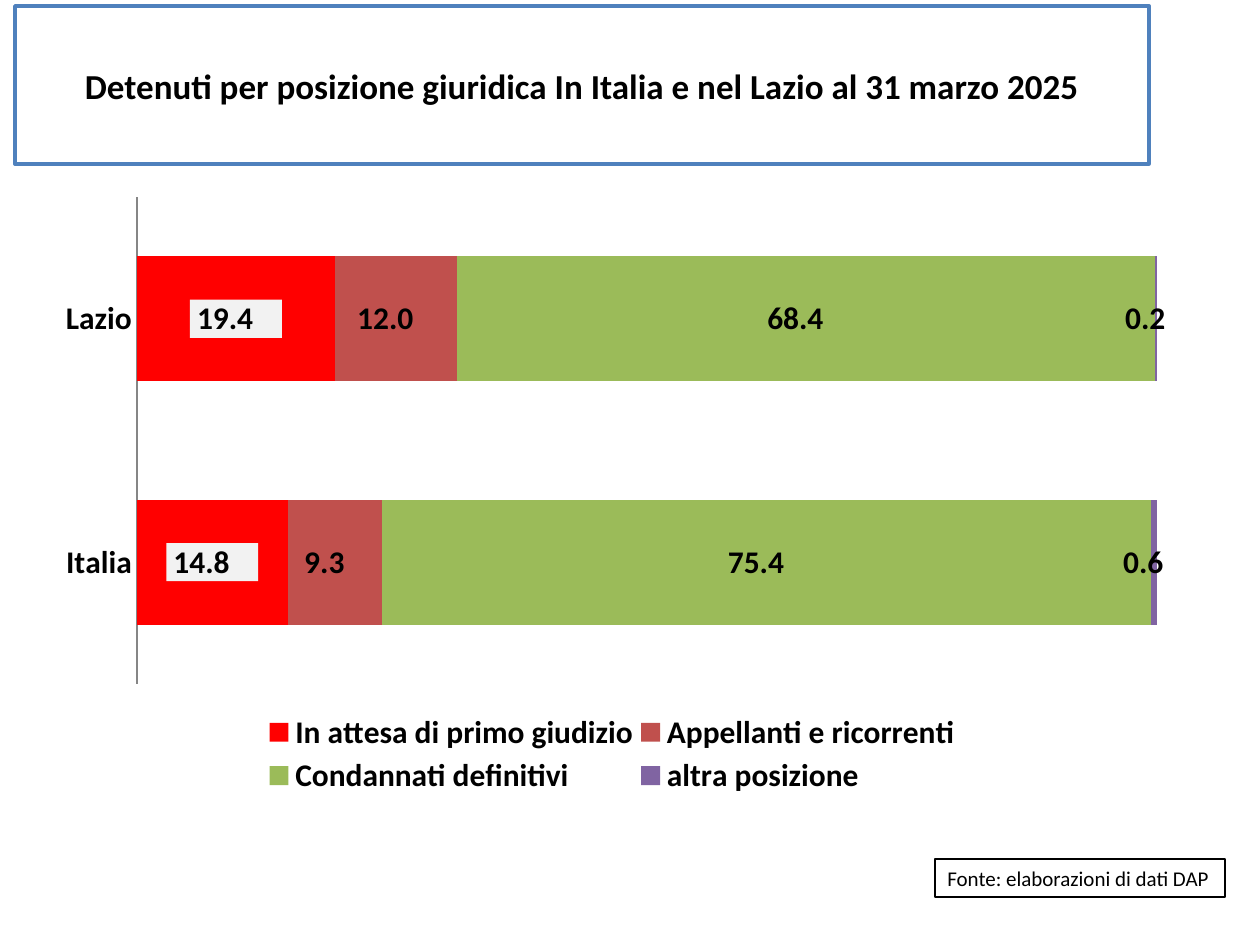
from lxml import etree
from pptx import Presentation
from pptx import util as u
from pptx.chart.data import CategoryChartData
from pptx.dml.color import RGBColor
from pptx.enum import chart as ch, text
from pptx.oxml import parse_xml
from pptx.oxml.ns import nsdecls, qn

TITLE = "Detenuti per posizione giuridica In Italia e nel Lazio al 31 marzo 2025"
SOURCE = "Fonte: elaborazioni di dati DAP"
CATS = ["Lazio", "Italia"]
SERIES = [
    ("In attesa di primo giudizio", (19.4, 14.8), "FF0000"),
    ("Appellanti e ricorrenti", (12.0, 9.3), "C0504D"),
    ("Condannati definitivi", (68.4, 75.4), "9BBB59"),
    ("altra posizione", (0.2, 0.6), "8064A2"),
]
NUMBER = r"_-* #,##0.0\ _€_-;\-* #,##0.0\ _€_-;_-* "
THEME = {
    "font": "Calibri", "ink": "000000", "paper": "FFFFFF", "frame": "4F81BD",
    "axis": "868686", "label": "F2F2F2", "title": 20, "chart": 18, "source": 12,
}

# Places in px: left, top, width, height
PX = u.Inches(1) // 126
SLIDE = (1260, 945)
HEAD = (15, 6, 1134, 158)
NOTE = (935, 859, 290, 38)
CHART = (44, 185, 1150, 616)
PLOT = (137, 197, 1022, 487)
LEGEND = (262, 708, 702, 92)


def rgb(name):
    return RGBColor.from_string(THEME.get(name, name))


def place(shape, box):
    for key, val in zip(("left", "top", "width", "height"), box):
        setattr(shape, key, val * PX)


def style(font, size, bold):
    look = {"name": THEME["font"], "size": u.Pt(THEME[size]), "bold": bold}
    for key, val in look.items():
        setattr(font, key, val)
    font.color.rgb = rgb("ink")


def panel(shape, words, size, bold, edge, width):
    """Fill a framed white box with one line of text."""
    shape.fill.solid()
    shape.fill.fore_color.rgb = rgb("paper")
    shape.line.color.rgb = rgb(edge)
    shape.line.width = u.Pt(width)
    frame = shape.text_frame
    frame.text = words
    style(frame.paragraphs[0].runs[0].font, size, bold)
    return frame


def lay(node, box, index, inner=False):
    """Give a chart part a fixed place, as shares of the chart."""
    for old in node.findall(qn("c:layout")):
        node.remove(old)
    layout = etree.Element(qn("c:layout"))
    manual = etree.SubElement(layout, qn("c:manualLayout"))
    left, top, width, height = CHART
    parts = [("layoutTarget", "inner")] if inner else []
    parts += [("xMode", "edge"), ("yMode", "edge")]
    shares = ((box[0] - left) / width, (box[1] - top) / height,
              box[2] / width, box[3] / height)
    parts += [(key, f"{val:.4f}") for key, val in zip("xywh", shares)]
    for key, val in parts:
        etree.SubElement(manual, qn("c:" + key)).set("val", val)
    node.insert(index, layout)


def draw(slide):
    data = CategoryChartData()
    data.categories = CATS
    for name, vals, _ in SERIES:
        data.add_series(name, vals)
    chart = slide.shapes.add_chart(
        ch.XL_CHART_TYPE.BAR_STACKED_100, *(n * PX for n in CHART), data).chart
    style(chart.font, "chart", True)
    chart.has_title = False

    plot = chart.plots[0]
    for key, val in {"gap_width": 95, "overlap": 100, "vary_by_categories": False}.items():
        setattr(plot, key, val)
    for series, (_, _, color) in zip(plot.series, SERIES):
        series.format.fill.solid()
        series.format.fill.fore_color.rgb = rgb(color)
        labels = series.data_labels
        look = {"show_value": True, "number_format": NUMBER, "number_format_is_linked": False}
        for key, val in look.items():
            setattr(labels, key, val)
        style(labels.font, "chart", True)
    back = parse_xml(
        f'<c:spPr {nsdecls("c", "a")}><a:solidFill><a:srgbClr val="{THEME["label"]}"/>'
        "</a:solidFill></c:spPr>")
    first = plot.series[0].data_labels
    first._element.find(qn("c:numFmt")).addnext(back)

    cat, val = chart.category_axis, chart.value_axis
    cat.reverse_order = True
    cat.major_tick_mark = ch.XL_TICK_MARK.NONE
    cat.format.line.color.rgb = rgb("axis")
    val.visible = val.has_major_gridlines = False

    chart.has_legend = True
    legend = chart.legend
    legend.position = ch.XL_LEGEND_POSITION.BOTTOM
    legend.include_in_layout = False
    style(legend.font, "chart", True)
    lay(chart._chartSpace.chart.plotArea, PLOT, 0, inner=True)
    lay(legend._element, LEGEND, 1)


def main():
    deck = Presentation()
    deck.slide_width, deck.slide_height = (n * PX for n in SLIDE)
    slide = deck.slides.add_slide(deck.slide_layouts[5])

    title = slide.shapes.title
    place(title, HEAD)
    head = panel(title, TITLE, "title", True, "frame", 2)
    head.vertical_anchor = text.MSO_ANCHOR.MIDDLE
    head.paragraphs[0].alignment = text.PP_ALIGN.CENTER

    note = slide.shapes.add_textbox(*(n * PX for n in NOTE))
    foot = panel(note, SOURCE, "source", False, "ink", 0.75)
    foot.word_wrap = False
    foot.auto_size = text.MSO_AUTO_SIZE.SHAPE_TO_FIT_TEXT

    draw(slide)
    deck.save("out.pptx")


if __name__ == "__main__":
    main()
